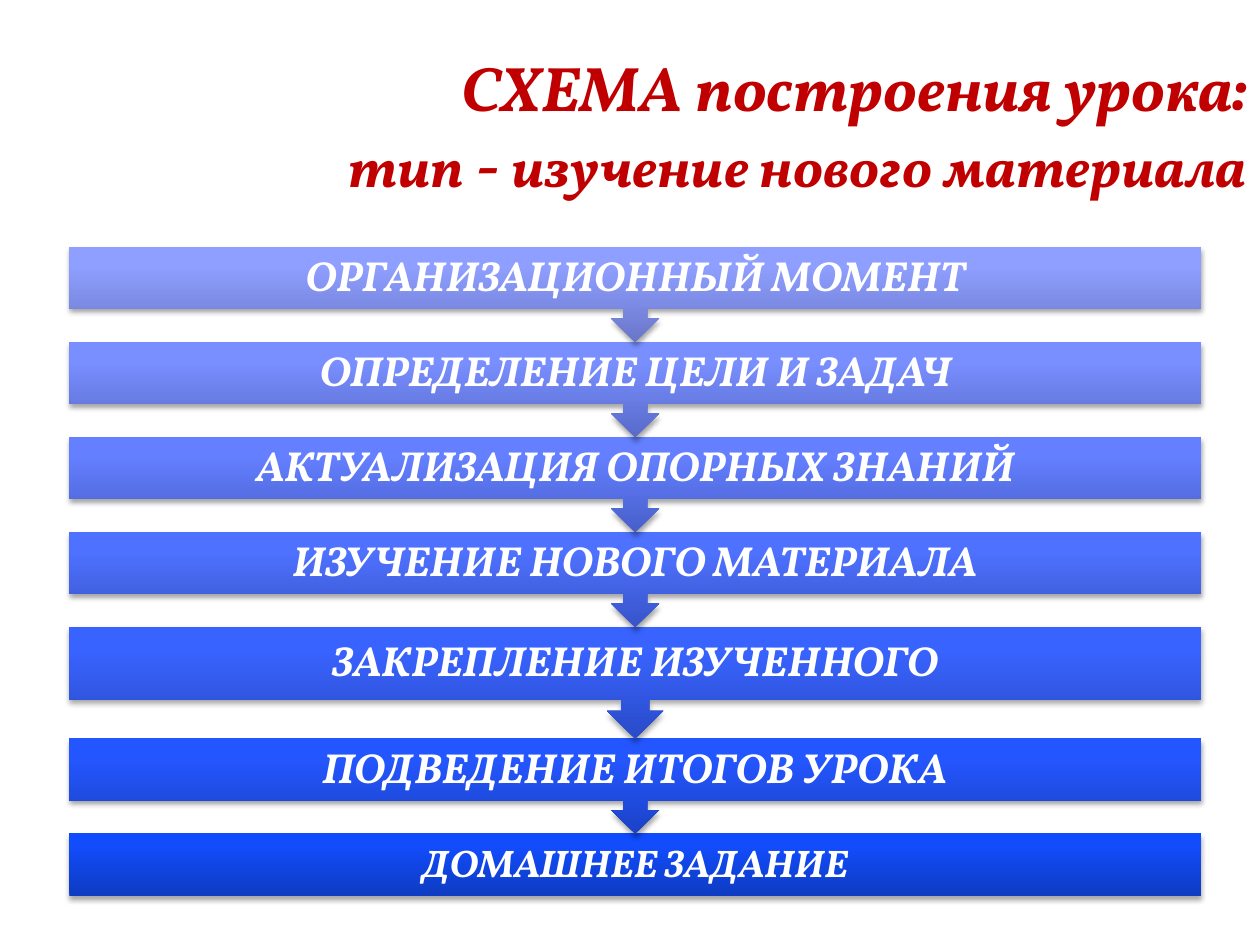
"""Build a slide showing the stages of a lesson as a chain of callouts."""
from copy import deepcopy

from lxml import etree
from pptx import Presentation
from pptx.dml.color import RGBColor
from pptx.enum.shapes import MSO_SHAPE as Shape
from pptx.enum.text import MSO_ANCHOR as Anchor, PP_ALIGN as Align
from pptx.oxml.ns import qn
from pptx.util import Pt

COLORS = {"title": "C00000", "label": "FFFFFF", "shadow": "000000"}
FONT = "Vollkorn"
LEFT, TOP, WIDTH = 39.6, 141, 646.6
BOX_HEIGHT, CALLOUT_HEIGHT, TALL_HEIGHT, OVERLAP = 36, 54.7, 64.1, 0.4

STAGES = [
    ("ОРГАНИЗАЦИОННЫЙ МОМЕНТ", CALLOUT_HEIGHT, ("6976C9", "8F9FFF", "90A0FF")),
    ("ОПРЕДЕЛЕНИЕ ЦЕЛИ И ЗАДАЧ", CALLOUT_HEIGHT, ("586ACA", "798FFF", "7B90FF")),
    ("АКТУАЛИЗАЦИЯ ОПОРНЫХ ЗНАНИЙ", CALLOUT_HEIGHT, ("475FCA", "647FFF", "6581FF")),
    ("ИЗУЧЕНИЕ НОВОГО МАТЕРИАЛА", CALLOUT_HEIGHT, ("3854C9", "4E71FF", "5072FF")),
    ("ЗАКРЕПЛЕНИЕ ИЗУЧЕННОГО", TALL_HEIGHT, ("294BC7", "3963FF", "3A64FF")),
    ("ПОДВЕДЕНИЕ ИТОГОВ УРОКА", CALLOUT_HEIGHT, ("1B42C5", "2456FF", "2557FF")),
    ("ДОМАШНЕЕ ЗАДАНИЕ", BOX_HEIGHT, ("0E3BC1", "124CFB", "0F4BFF")),
]


def style_font(font, size, color):
    font.name, font.size = FONT, Pt(size)
    font.bold = font.italic = True
    font.color.rgb = RGBColor.from_string(COLORS[color])


def style_surface(shape, colors):
    shape.line.fill.background()
    shape.fill.gradient()
    shape.fill.gradient_angle = 90
    stop_list = shape._element.spPr.find(f".//{qn('a:gsLst')}")
    stop_list.append(deepcopy(stop_list[-1]))
    for stop, position, color in zip(shape.fill.gradient_stops, (0, 0.8, 1), colors):
        stop.position = position
        stop.color.rgb = RGBColor.from_string(color)
    shape.shadow.inherit = False
    effects = shape._element.spPr.find(qn("a:effectLst"))
    shadow = etree.SubElement(
        effects, qn("a:outerShdw"), blurRad=str(Pt(3.1)), dist=str(Pt(1.8)),
        dir="5400000", rotWithShape="0")
    color = etree.SubElement(shadow, qn("a:srgbClr"), val=COLORS["shadow"])
    etree.SubElement(color, qn("a:alpha"), val="35000")


presentation = Presentation()
presentation.slide_width, presentation.slide_height = Pt(720), Pt(540)
slide = presentation.slides.add_slide(presentation.slide_layouts[6])

title = slide.shapes.add_textbox(Pt(135.4), Pt(39.6), Pt(584.6), Pt(62.6))
title.text_frame.word_wrap = True
title.text_frame.vertical_anchor = Anchor.MIDDLE
paragraph = title.text_frame.paragraphs[0]
paragraph.alignment = Align.RIGHT
style_font(paragraph.font, 36, "title")
paragraph.add_run().text = "СХЕМА построения урока:"
paragraph.add_line_break()
for text, size in (("тип", 32), (" - ", 36), ("изучение нового материала", 32)):
    run = paragraph.add_run()
    run.text = text
    run.font.size = Pt(size)

tops = [TOP]
for text, height, colors in STAGES[:-1]:
    tops.append(tops[-1] + height - OVERLAP)

for top, (text, height, colors) in reversed(list(zip(tops, STAGES))):
    last = height == BOX_HEIGHT
    kind = Shape.RECTANGLE if last else Shape.DOWN_ARROW_CALLOUT
    stage = slide.shapes.add_shape(kind, Pt(LEFT), Pt(top), Pt(WIDTH), Pt(height))
    style_surface(stage, colors)
    frame = stage.text_frame
    frame.word_wrap = True
    frame.vertical_anchor = Anchor.MIDDLE
    frame.margin_top = frame.margin_bottom = 0
    paragraph = frame.paragraphs[0]
    paragraph.text = text
    paragraph.alignment = Align.CENTER
    paragraph.line_spacing = 0.9
    style_font(paragraph.font, 22 if last else 24, "label")

presentation.save("out.pptx")
